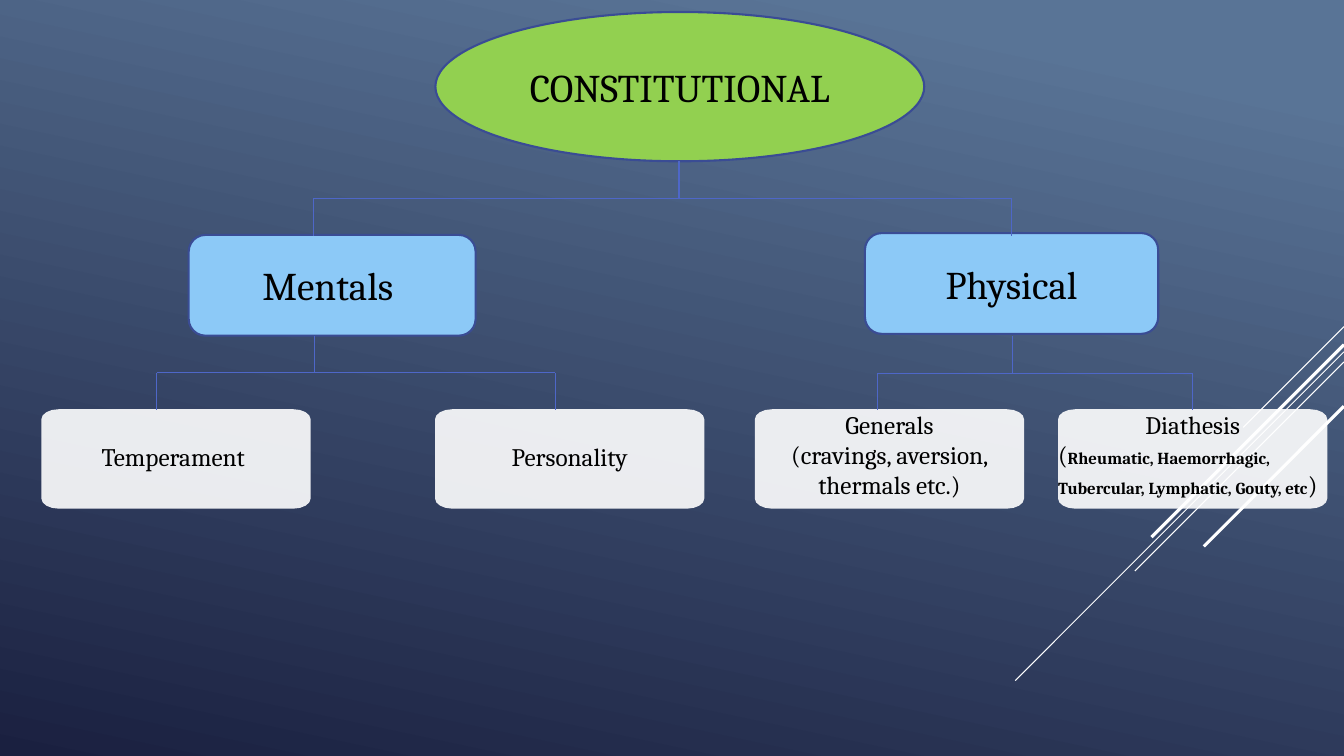
from math import cos, pi, sin

from lxml import etree
from pptx import Presentation
from pptx.dml.color import RGBColor
from pptx.enum.shapes import MSO_CONNECTOR, MSO_SHAPE
from pptx.enum.text import MSO_ANCHOR as Anchor, PP_ALIGN as Align
from pptx.oxml.ns import qn
from pptx.util import Pt

SLIDE_W, SLIDE_H = 960, 540
FONT = "Cambria"
BLACK, WHITE = "000000", "FFFFFF"
GREEN, SKY = "92D050", "8CC9F7"
OUTLINE, BRANCH = "3A4C94", "4E67C8"
LEAF_TOP, LEAF_W, LEAF_H = 292.3, 192.3, 71
CORNER_W, CORNER_H = 12.2, 7.2


def color(hex_text):
    return RGBColor.from_string(hex_text)


def paint_background(slide, angle, stops):
    fill = slide.background.fill
    fill.gradient()
    fill.gradient_angle = 360 - angle
    for stop, (position, shade) in zip(fill.gradient_stops, stops):
        stop.position = position
        stop.color.rgb = color(shade)


def add_line(slide, x1, y1, x2, y2, shade, width):
    line = slide.shapes.add_connector(
        MSO_CONNECTOR.STRAIGHT, Pt(x1), Pt(y1), Pt(x2), Pt(y2))
    line.line.color.rgb = color(shade)
    line.line.width = Pt(width)
    etree.SubElement(line._element.spPr, qn("a:effectLst"))


def style_paragraph(paragraph, size, align):
    paragraph.alignment = align
    paragraph.font.name = FONT
    paragraph.font.size = Pt(size)
    paragraph.font.color.rgb = color(BLACK)


def add_node(slide, preset, box, fill, label):
    node = slide.shapes.add_shape(preset, *map(Pt, box))
    node.shadow.inherit = False
    node.fill.solid()
    node.fill.fore_color.rgb = color(fill)
    node.line.color.rgb = color(OUTLINE)
    node.line.width = Pt(1.5)
    node.text_frame.vertical_anchor = Anchor.MIDDLE
    heading = node.text_frame.paragraphs[0]
    heading.text = label
    style_paragraph(heading, 28, Align.CENTER)


def leaf_outline(left):
    """Rounded corners, each a quarter ellipse in four steps, clockwise."""
    points = []
    for corner in range(4):
        right_side, lower_side = corner in (1, 2), corner in (2, 3)
        x = left + (LEAF_W - CORNER_W if right_side else CORNER_W)
        y = LEAF_TOP + (LEAF_H - CORNER_H if lower_side else CORNER_H)
        for step in range(5):
            angle = pi + corner * pi / 2 + step * pi / 8
            points.append((Pt(x + CORNER_W * cos(angle)),
                           Pt(y + CORNER_H * sin(angle))))
    return points


def add_leaf(slide, left, lines):
    """Each line is an alignment and a list of (text, is_small_print)."""
    start, *rest = leaf_outline(left)
    builder = slide.shapes.build_freeform(*start)
    builder.add_line_segments(rest, close=True)
    leaf = builder.convert_to_shape()
    leaf.shadow.inherit = False
    leaf.fill.solid()
    leaf.fill.fore_color.rgb = color(WHITE)
    shade = leaf._element.spPr.find(".//" + qn("a:srgbClr"))
    etree.SubElement(shade, qn("a:alpha"), val="90000")
    leaf.line.fill.background()

    frame = leaf.text_frame
    frame.word_wrap = True
    frame.margin_left = frame.margin_right = frame.margin_top = 0
    # A single line sits slightly above the middle
    frame.margin_bottom = Pt(4 if len(lines) == 1 else 0)
    frame.vertical_anchor = Anchor.MIDDLE if len(lines) == 1 else Anchor.TOP
    for index, (align, pieces) in enumerate(lines):
        paragraph = frame.add_paragraph() if index else frame.paragraphs[0]
        style_paragraph(paragraph, 18, align)
        for text, small_print in pieces:
            run = paragraph.add_run()
            run.text = text
            if small_print:
                run.font.size = Pt(12)
                run.font.bold = True


def add_branch(slide, parent_x, top, bar_y, child_xs, bottom):
    segments = [(parent_x, top, parent_x, bar_y),
                (child_xs[0], bar_y, child_xs[-1], bar_y)]
    segments += [(x, bar_y, x, bottom) for x in child_xs]
    for segment in segments:
        add_line(slide, *segment, BRANCH, 0.79)


def main():
    prs = Presentation()
    prs.slide_width, prs.slide_height = Pt(SLIDE_W), Pt(SLIDE_H)
    slide = prs.slides.add_slide(prs.slide_layouts[6])
    paint_background(slide, 102, [(0.1, "597496"), (1, "1A2040")])

    # Diagonal rays from the right edge: start height, run, width
    for y, reach, width in [(233.3, 72, 0.75), (251.3, 234.8, 0.75),
                            (258.5, 149.4, 0.75), (246.2, 137.5, 2.25),
                            (290.2, 100.1, 2.25)]:
        add_line(slide, SLIDE_W, y, SLIDE_W - reach, y + reach, WHITE, width)

    # Root and its two divisions
    add_node(slide, MSO_SHAPE.OVAL, (311, 8.6, 349.2, 106.6),
             GREEN, "CONSTITUTIONAL")
    add_node(slide, MSO_SHAPE.ROUNDED_RECTANGLE, (617.8, 166.5, 209.5, 72),
             SKY, "Physical")
    add_node(slide, MSO_SHAPE.ROUNDED_RECTANGLE, (134.8, 167.8, 205, 72),
             SKY, "Mentals ")

    # Leaves
    center, left = Align.CENTER, Align.LEFT
    add_leaf(slide, 29.6, [(center, [("Temperament ", False)])])
    add_leaf(slide, 310.8, [(center, [("Personality", False)])])
    add_leaf(slide, 755.8, [
        (center, [("Diathesis", False)]),
        (left, [("(", False), ("Rheumatic, Haemorrhagic,", True)]),
        (left, [("Tubercular, Lymphatic, Gouty, etc", True), (")", False)]),
    ])
    add_leaf(slide, 539.2, [
        (center, [("Generals", False)]),
        (center, [("(cravings, aversion, thermals etc.)", False)]),
    ])

    # Branches
    add_branch(slide, 485, 115.2, 141.5, (223.8, 722.5), 168.3)
    add_branch(slide, 224.7, 239.8, 266.4, (111.9, 396.5), 292.7)
    add_branch(slide, 723.2, 239.8, 266.6, (626.8, 851.8), 293)

    prs.save("out.pptx")


if __name__ == "__main__":
    main()
